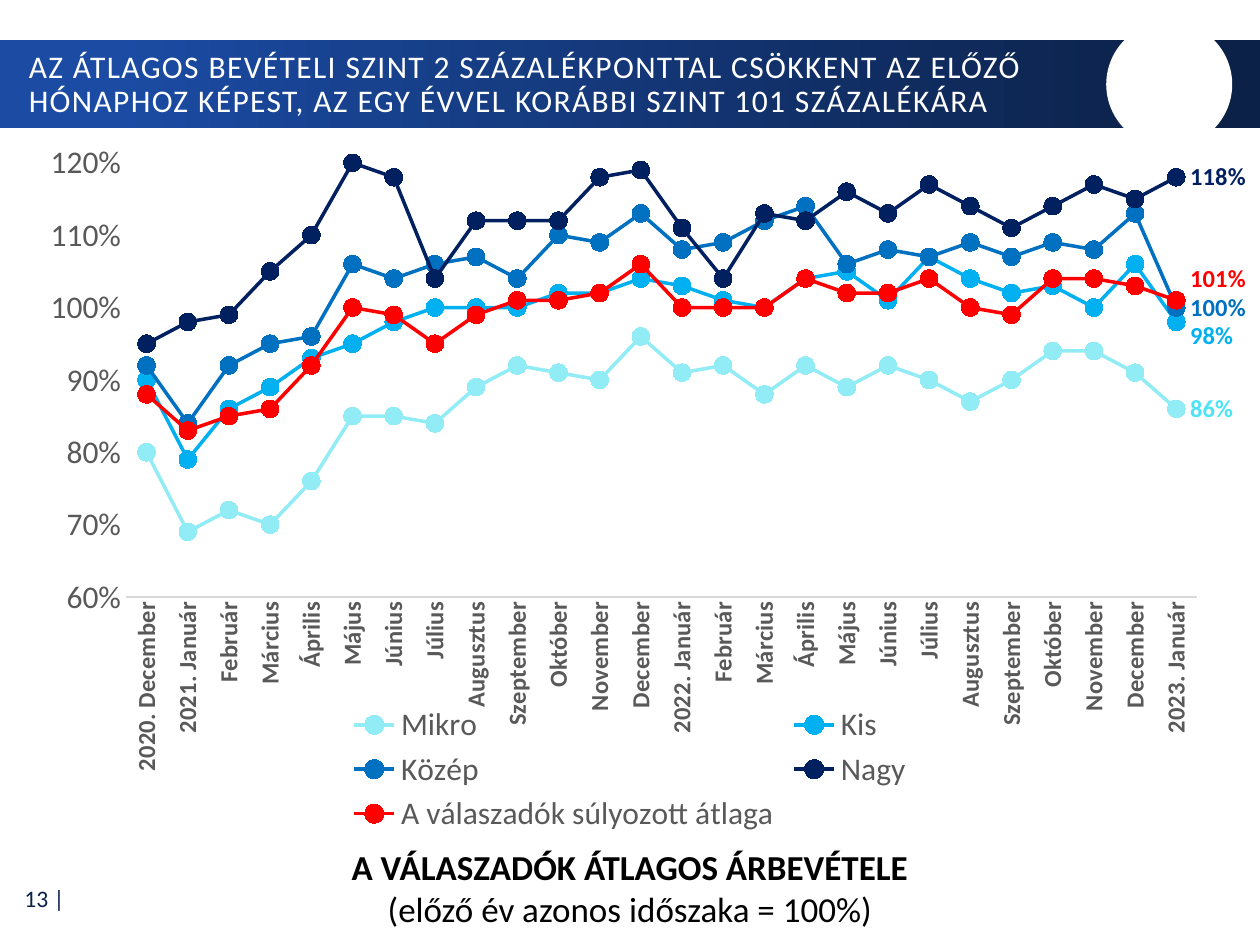
from dataclasses import dataclass

from pptx import Presentation
from pptx.chart.data import CategoryChartData
from pptx.dml.color import RGBColor
from pptx.enum.chart import (XL_CHART_TYPE, XL_LABEL_POSITION, XL_LEGEND_POSITION,
                             XL_MARKER_STYLE, XL_TICK_MARK)
from pptx.enum.shapes import MSO_SHAPE
from pptx.enum.text import MSO_ANCHOR, PP_ALIGN
from pptx.oxml import parse_xml
from pptx.oxml.ns import nsdecls
from pptx.util import Inches, Pt

LINE_MARKERS = XL_CHART_TYPE.LINE_MARKERS
CIRCLE = XL_MARKER_STYLE.CIRCLE
NO_TICK = XL_TICK_MARK.NONE
LABEL_RIGHT = XL_LABEL_POSITION.RIGHT
LEGEND_BOTTOM = XL_LEGEND_POSITION.BOTTOM
RECTANGLE, OVAL = MSO_SHAPE.RECTANGLE, MSO_SHAPE.OVAL
TOP, MIDDLE = MSO_ANCHOR.TOP, MSO_ANCHOR.MIDDLE
LEFT, CENTER, RIGHT = PP_ALIGN.LEFT, PP_ALIGN.CENTER, PP_ALIGN.RIGHT


@dataclass(frozen=True)
class Theme:
    font: str = "Calibri"
    white: str = "FFFFFF"
    black: str = "000000"
    blue: str = "1B4BA3"
    navy: str = "0C2148"
    grey: str = "595959"
    axis: str = "D9D9D9"
    title: float = 18
    caption: float = 20
    chart: float = 18
    small: float = 14
    page: float = 13.5


@dataclass(frozen=True)
class Run:
    text: str
    size: float
    color: str
    bold: bool = False
    spacing: int = 0


@dataclass(frozen=True)
class Series:
    name: str
    color: str
    percents: list[int]
    label_color: str
    label_shift: tuple[float, float] = (0, 0)


THEME = Theme()
MONTHS = ["Január", "Február", "Március", "Április", "Május", "Június", "Július",
          "Augusztus", "Szeptember", "Október", "November", "December"]
CATEGORIES = ["2020. December", "2021. Január", *MONTHS[1:],
              "2022. Január", *MONTHS[1:], "2023. Január"]
SERIES = [
    Series("Mikro", "92ECF6",
           [80, 69, 72, 70, 76, 85, 85, 84, 89, 92, 91, 90, 96,
            91, 92, 88, 92, 89, 92, 90, 87, 90, 94, 94, 91, 86], "4BE3F5"),
    Series("Kis", "00B0F0",
           [90, 79, 86, 89, 93, 95, 98, 100, 100, 100, 102, 102, 104,
            103, 101, 100, 104, 105, 101, 107, 104, 102, 103, 100, 106, 98],
           "00B0F0", (0, 0.02)),
    Series("Közép", "0070C0",
           [92, 84, 92, 95, 96, 106, 104, 106, 107, 104, 110, 109, 113,
            108, 109, 112, 114, 106, 108, 107, 109, 107, 109, 108, 113, 100], "0070C0"),
    Series("Nagy", "002060",
           [95, 98, 99, 105, 110, 120, 118, 104, 112, 112, 112, 118, 119,
            111, 104, 113, 112, 116, 113, 117, 114, 111, 114, 117, 115, 118], "002060"),
    Series("A válaszadók súlyozott átlaga", "FF0000",
           [88, 83, 85, 86, 92, 100, 99, 95, 99, 101, 101, 102, 106,
            100, 100, 100, 104, 102, 102, 104, 100, 99, 104, 104, 103, 101],
           "FF0000", (0, -0.03)),
]


def rgb(color: str) -> RGBColor:
    return RGBColor.from_string(color)


def style_font(font, size: float, color: str, bold: bool = False) -> None:
    font.name, font.size, font.bold = THEME.font, Pt(size), bold
    font.color.rgb = rgb(color)


def box(bounds: tuple) -> list:
    return [Inches(v) for v in bounds]


def add_text(slide, bounds: tuple, runs: list[Run], align=LEFT, anchor=TOP,
             line_spacing: float = 1.0) -> None:
    """Add a text box with one paragraph for each run."""
    tf = slide.shapes.add_textbox(*box(bounds)).text_frame
    tf.word_wrap = True
    tf.vertical_anchor = anchor
    for i, run in enumerate(runs):
        p = tf.add_paragraph() if i else tf.paragraphs[0]
        p.alignment, p.line_spacing = align, line_spacing
        r = p.add_run()
        r.text = run.text
        style_font(r.font, run.size, run.color, run.bold)
        if run.spacing:
            r.font._element.set("spc", str(run.spacing))


def add_plain_shape(slide, kind, bounds: tuple):
    sp = slide.shapes.add_shape(kind, *box(bounds))
    sp.shadow.inherit = False
    sp.line.fill.background()
    return sp


def add_header(slide) -> None:
    band = add_plain_shape(slide, RECTANGLE, (0, 0.32, 10, 0.7))
    band.fill.gradient()
    band.fill.gradient_angle = 0
    stops = ((0.09, THEME.blue), (0.95, THEME.navy))
    for stop, (position, color) in zip(band.fill.gradient_stops, stops):
        stop.position = position
        stop.color.rgb = rgb(color)
    disc = add_plain_shape(slide, OVAL, (8.78, 0.17, 1, 1))
    disc.fill.solid()
    disc.fill.fore_color.rgb = rgb(THEME.white)


def manual_layout(x: float, y: float, inner_size: tuple = ()):
    """Layout element: a shift for a label, or an inner plot area if a size is given."""
    parts = [("x", x), ("y", y)]
    if inner_size:
        parts = [("layoutTarget", "inner"), ("xMode", "edge"), ("yMode", "edge"),
                 *parts, *zip("wh", inner_size)]
    body = "".join(f'<c:{tag} val="{value}"/>' for tag, value in parts)
    return parse_xml(f'<c:layout {nsdecls("c")}><c:manualLayout>{body}'
                     '</c:manualLayout></c:layout>')


def style_series(ser, data: Series) -> None:
    ser.smooth = False
    ser.format.line.color.rgb = rgb(data.color)
    ser.format.line.width = Pt(2)
    ser.marker.style, ser.marker.size = CIRCLE, 10
    ser.marker.format.fill.solid()
    ser.marker.format.fill.fore_color.rgb = rgb(data.color)
    ser.marker.format.line.color.rgb = rgb(data.color)
    ser.data_labels.show_value = False
    label = ser.points[len(data.percents) - 1].data_label
    style_font(label.font, THEME.small, data.label_color, True)
    label.position = LABEL_RIGHT
    if any(data.label_shift):
        ser._element.xpath("c:dLbls/c:dLbl")[0].insert(1, manual_layout(*data.label_shift))


def add_revenue_chart(slide) -> None:
    data = CategoryChartData(number_format="0%")
    data.categories = CATEGORIES
    for s in SERIES:
        data.add_series(s.name, [v / 100 for v in s.percents])
    chart = slide.shapes.add_chart(LINE_MARKERS, *box((0, 1.01, 10, 5.65)), data).chart
    style_font(chart.font, THEME.chart, THEME.black)
    chart.has_title = False
    chart.has_legend = True
    chart.legend.position = LEGEND_BOTTOM
    chart.legend.include_in_layout = False
    style_font(chart.legend.font, THEME.chart, THEME.grey)

    months, levels = chart.category_axis, chart.value_axis
    for axis in (months, levels):
        axis.major_tick_mark = axis.minor_tick_mark = NO_TICK
        axis.has_major_gridlines = False
    style_font(months.tick_labels.font, THEME.small, THEME.grey, True)
    months.tick_labels.font._element.getparent().getparent().getparent().find(
        "{*}bodyPr").set("rot", "-5400000")
    months.format.line.color.rgb = rgb(THEME.axis)
    months.format.line.width = Pt(0.75)
    style_font(levels.tick_labels.font, THEME.chart, THEME.grey)
    levels.tick_labels.number_format = "0%"
    levels.tick_labels.number_format_is_linked = False
    levels.format.line.fill.background()
    levels.minimum_scale, levels.maximum_scale, levels.major_unit = 0.6, 1.2, 0.1

    plot = chart.plots[0]
    plot.vary_by_categories = False
    for ser, s in zip(plot.series, SERIES):
        style_series(ser, s)
    area = chart._chartSpace.chart.plotArea
    for old in area.xpath("c:layout"):
        area.remove(old)
    area.insert(0, manual_layout(0.1, 0.05, (0.85, 0.61)))


def main() -> None:
    prs = Presentation()
    prs.slide_width, prs.slide_height = Inches(10), Inches(7.5)
    slide = prs.slides.add_slide(prs.slide_layouts[6])
    add_text(slide, (0.01, 6.94, 0.6, 0.37), [Run("13 |", THEME.page, THEME.navy)],
             RIGHT, MIDDLE)
    add_header(slide)
    add_text(slide, (0.13, 0.34, 8.72, 0.67),
             [Run("AZ ÁTLAGOS BEVÉTELI SZINT 2 SZÁZALÉKPONTTAL CSÖKKENT AZ ELŐZŐ "
                  "HÓNAPHOZ KÉPEST, AZ EGY ÉVVEL KORÁBBI SZINT 101 SZÁZALÉKÁRA",
                  THEME.title, THEME.white, spacing=80)], LEFT, MIDDLE, 0.9)
    add_text(slide, (0.97, 6.66, 8.06, 1.11),
             [Run("A VÁLASZADÓK ÁTLAGOS ÁRBEVÉTELE", THEME.caption, THEME.black, True),
              Run("(előző év azonos időszaka = 100%)", THEME.caption, THEME.black)], CENTER)
    add_revenue_chart(slide)
    prs.save("out.pptx")


if __name__ == "__main__":
    main()
